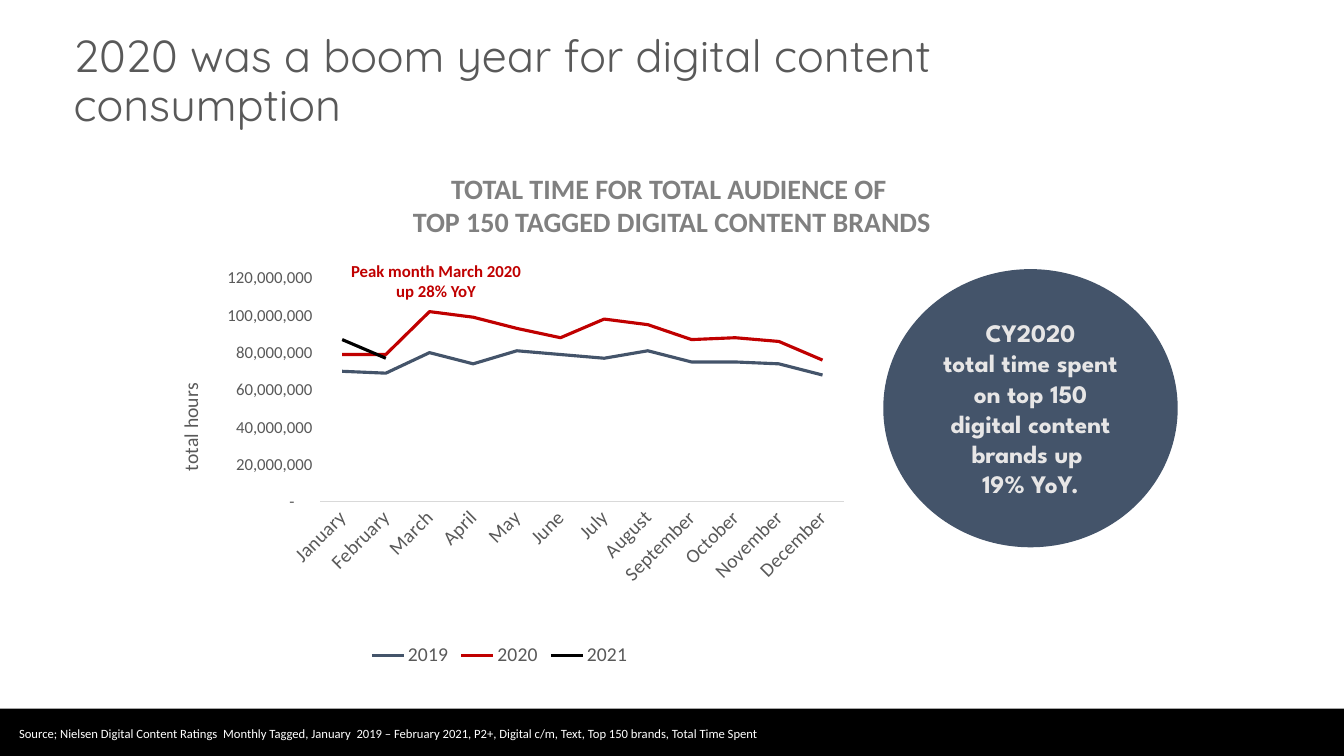
from lxml import etree
from pptx import Presentation
from pptx.chart.data import CategoryChartData
from pptx.dml.color import RGBColor
from pptx.enum.chart import XL_CHART_TYPE, XL_LEGEND_POSITION, XL_TICK_MARK
from pptx.enum.shapes import MSO_SHAPE
from pptx.enum.text import MSO_ANCHOR, PP_ALIGN
from pptx.oxml import parse_xml
from pptx.oxml.ns import nsdecls, qn
from pptx.util import Inches, Pt

LINE_CHART = XL_CHART_TYPE.LINE
LEGEND_BOTTOM = XL_LEGEND_POSITION.BOTTOM
NO_TICK = XL_TICK_MARK.NONE
RECTANGLE, OVAL = MSO_SHAPE.RECTANGLE, MSO_SHAPE.OVAL
TOP, MIDDLE = MSO_ANCHOR.TOP, MSO_ANCHOR.MIDDLE
LEFT, CENTER = PP_ALIGN.LEFT, PP_ALIGN.CENTER

BLACK = RGBColor(0x00, 0x00, 0x00)
WHITE = RGBColor(0xFF, 0xFF, 0xFF)
SLATE = RGBColor(0x44, 0x54, 0x6A)
RED = RGBColor(0xC0, 0x00, 0x00)
DARK_GREY = RGBColor(0x59, 0x59, 0x59)
MID_GREY = RGBColor(0x80, 0x80, 0x80)
AXIS_GREY = RGBColor(0xD9, 0xD9, 0xD9)
PALE_GREY = RGBColor(0xE7, 0xE6, 0xE6)

TITLE = {"name": "Quicksand", "size": Pt(32), "bold": False}
BODY = {"name": "Calibri", "bold": False}
BADGE = {"name": "League Spartan", "size": Pt(18), "bold": True}

MONTHS = ["January", "February", "March", "April", "May", "June", "July",
          "August", "September", "October", "November", "December"]
MILLION_HOURS = {
    "2019": [70, 69, 80, 74, 81, 79, 77, 81, 75, 75, 74, 68],
    "2020": [79, 79, 102, 99, 93, 88, 98, 95, 87, 88, 86, 76],
    "2021": [87, 77] + [None] * 10,
}
YEAR_COLORS = [SLATE, RED, BLACK]
PLOT_AREA = {"x": 0.252, "y": 0.053, "w": 0.725, "h": 0.539}
HOURS_FORMAT = r'_-* #,##0_-;\-* #,##0_-;_-* "-"??_-;_-@_-'


class ReportSlide:
    def __init__(self, deck):
        self.width, self.height = deck.slide_width, deck.slide_height
        self.slide = deck.slides.add_slide(deck.slide_layouts[5])

    def area(self, left, top, width, height):
        return (int(self.width * left / 100), int(self.height * top / 100),
                int(self.width * width / 100), int(self.height * height / 100))

    def style(self, font, color, look):
        for attribute, value in look.items():
            setattr(font, attribute, value)
        font.color.rgb = color

    def fill_text(self, holder, lines, look, color, align=LEFT, anchor=TOP, spacing=None):
        frame = holder.text_frame
        frame.word_wrap = True
        frame.vertical_anchor = anchor
        for index, line in enumerate(lines):
            paragraph = frame.add_paragraph() if index else frame.paragraphs[0]
            paragraph.text = line
            paragraph.alignment = align
            paragraph.line_spacing = spacing
            for run in paragraph.runs:
                self.style(run.font, color, look)

    def title(self, share, text):
        heading = self.slide.shapes.title
        heading.left, heading.top, heading.width, heading.height = self.area(*share)
        self.fill_text(heading, [text], TITLE, DARK_GREY, anchor=MIDDLE, spacing=0.9)

    def text(self, share, text, size, color, bold=True, align=CENTER):
        box = self.slide.shapes.add_textbox(*self.area(*share))
        self.fill_text(box, [text], BODY | {"size": Pt(size), "bold": bold}, color, align)

    def shape(self, share, kind, fill, lines=()):
        panel = self.slide.shapes.add_shape(kind, *self.area(*share))
        panel.shadow.inherit = False
        panel.fill.solid()
        panel.fill.fore_color.rgb = fill
        panel.line.fill.background()
        self.fill_text(panel, lines, BADGE, PALE_GREY, CENTER, MIDDLE)

    def line_chart(self, share):
        hours = CategoryChartData(number_format=HOURS_FORMAT)
        hours.categories = MONTHS
        for year, values in MILLION_HOURS.items():
            hours.add_series(year, [v and v * 1_000_000 for v in values])
        chart = self.slide.shapes.add_chart(LINE_CHART, *self.area(*share), hours).chart
        chart.has_title = False
        self.style(chart.font, BLACK, BODY | {"size": Pt(10)})
        chart.has_legend = True
        chart.legend.position = LEGEND_BOTTOM
        chart.legend.include_in_layout = False
        self.style(chart.legend.font, DARK_GREY, BODY | {"size": Pt(14)})
        chart.plots[0].vary_by_categories = False
        for series, color in zip(chart.plots[0].series, YEAR_COLORS):
            series.smooth = False
            series.format.line.color.rgb = color
            series.format.line.width = Pt(2.25)
        self.axes(chart)
        self.place_plot(chart)

    def axes(self, chart):
        months, hours = chart.category_axis, chart.value_axis
        for axis, size in ((months, 14), (hours, 12)):
            axis.has_major_gridlines = False
            axis.major_tick_mark = axis.minor_tick_mark = NO_TICK
            self.style(axis.tick_labels.font, DARK_GREY, BODY | {"size": Pt(size)})
        months.format.line.color.rgb = AXIS_GREY
        months.format.line.width = Pt(0.75)
        months._element.find(qn("c:txPr")).find(qn("a:bodyPr")).set("rot", "-2700000")
        hours.format.line.fill.background()
        hours.minimum_scale, hours.maximum_scale = 0, 120_000_000
        hours.major_unit = 20_000_000
        hours.tick_labels.number_format = HOURS_FORMAT
        hours.tick_labels.number_format_is_linked = False
        caption = hours.axis_title.text_frame
        caption.text = "total hours"
        self.style(caption.paragraphs[0].runs[0].font, DARK_GREY, BODY | {"size": Pt(14)})

    def place_plot(self, chart):
        plot_area = chart._chartSpace.chart.plotArea
        for old in plot_area.findall(qn("c:layout")):
            plot_area.remove(old)
        layout = parse_xml(f"<c:layout {nsdecls('c')}><c:manualLayout/></c:layout>")
        settings = {"layoutTarget": "inner", "xMode": "edge", "yMode": "edge"} | PLOT_AREA
        for tag, value in settings.items():
            etree.SubElement(layout[0], qn(f"c:{tag}")).set("val", str(value))
        plot_area.insert(0, layout)


def main():
    deck = Presentation()
    deck.slide_width, deck.slide_height = Inches(13.33), Inches(7.5)
    report = ReportSlide(deck)
    report.shape((0, 93.73, 100, 6.27), RECTANGLE, BLACK)
    report.line_chart((10.28, 33.87, 53.79, 54.93))
    report.title((4.73, 3.33, 82.15, 15.2),
                 "2020 was a boom year for digital content consumption")
    report.text((0.68, 95.33, 81.47, 3.33),
                "Source; Nielsen Digital Content Ratings  Monthly Tagged, January  2019 – "
                "February 2021, P2+, Digital c/m, Text, Top 150 brands, Total Time Spent",
                9, WHITE, bold=False, align=LEFT)
    report.text((0, 22, 100, 10.27),
                "TOTAL TIME FOR TOTAL AUDIENCE OF \vTOP 150 TAGGED DIGITAL CONTENT BRANDS",
                20, MID_GREY)
    report.shape((65.72, 35.6, 21.91, 36.8), OVAL, SLATE,
                 ["CY2020", "total time spent on top 150 digital content brands up \v19% YoY."])
    report.text((24.98, 33.87, 14.93, 6.67), "Peak month March 2020 up 28% YoY", 12, RED)
    deck.save("out.pptx")


if __name__ == "__main__":
    main()
